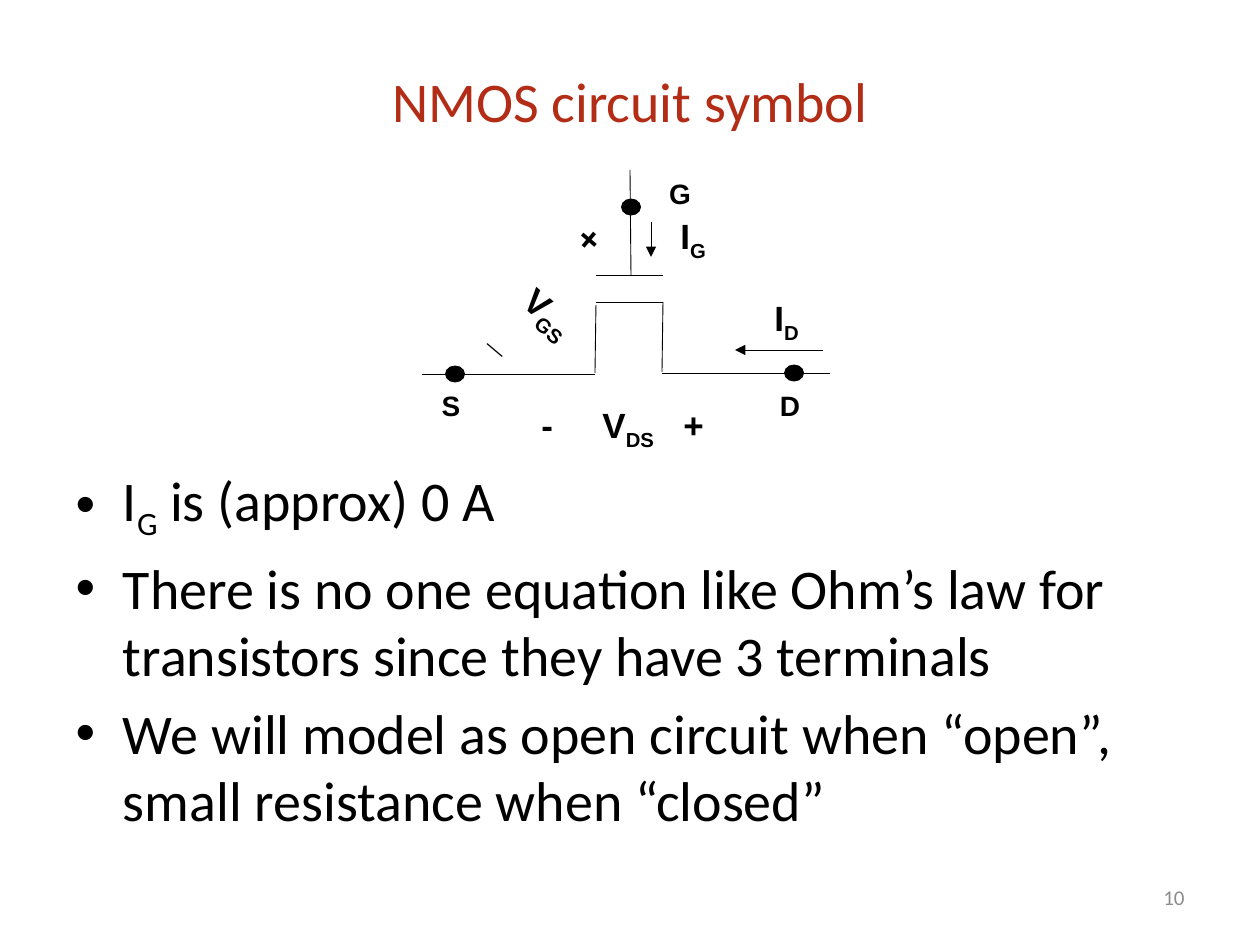
from dataclasses import dataclass

from lxml.etree import SubElement
from pptx import Presentation
from pptx.dml.color import RGBColor
from pptx.enum.shapes import MSO_CONNECTOR as Conn, MSO_SHAPE as Kind
from pptx.enum.text import MSO_ANCHOR as Anchor, MSO_AUTO_SIZE as Fit, PP_ALIGN as Align
from pptx.oxml.ns import qn
from pptx.util import Emu, Pt

SCALE = 914400 / 126  # EMU in one px
BLACK, RED, GRAY = "000000", "B32C16", "8C8C8C"
DOT_W, DOT_H = 19, 16


@dataclass
class Wire:
    x1: int
    y1: int
    x2: int
    y2: int
    arrow: bool = False


@dataclass
class Label:
    lines: list[str]  # text between ~ marks is subscript
    x: int
    y: int
    w: int
    h: int
    size: int = 20
    font: str = "Arial"
    color: str = BLACK
    bold: bool = True
    align: Align = Align.LEFT
    wrap: bool = False
    turn: float = 0
    gaps: tuple[int, ...] = ()  # points before each line
    tabs: tuple[int, ...] = ()


def px(n: float) -> Emu:
    return Emu(round(n * SCALE))


def rgb(code: str) -> RGBColor:
    return RGBColor.from_string(code)


def place(shape, x: int, y: int, w: int, h: int) -> None:
    shape.left, shape.top, shape.width, shape.height = map(px, (x, y, w, h))


def write(para, text: str, font: str, size: int, color: str, bold: bool = False) -> None:
    style = para.font
    style.name, style.size, style.bold = font, Pt(size), bold
    style.color.rgb = rgb(color)
    for i, part in enumerate(text.split("~")):
        if part:
            run = para.add_run()
            run.text = part
            if i % 2:
                run._r.get_or_add_rPr().set("baseline", "-25000")


def fill_box(frame, lines: list[str], *style) -> None:
    for i, text in enumerate(lines):
        para = frame.add_paragraph() if i else frame.paragraphs[0]
        write(para, text, *style)


def draw_wire(slide, wire: Wire) -> None:
    ends = map(px, (wire.x1, wire.y1, wire.x2, wire.y2))
    shape = slide.shapes.add_connector(Conn.STRAIGHT, *ends)
    shape.line.width = Pt(0.5)
    shape.line.color.rgb = rgb(BLACK)
    if wire.arrow:
        SubElement(shape.line._get_or_add_ln(), qn("a:tailEnd"), type="triangle")
    SubElement(shape._element.spPr, qn("a:effectLst"))


def draw_dot(slide, x: int, y: int) -> None:
    box = map(px, (x - DOT_W / 2, y - DOT_H / 2, DOT_W, DOT_H))
    dot = slide.shapes.add_shape(Kind.OVAL, *box)
    dot.shadow.inherit = False
    dot.fill.solid()
    dot.fill.fore_color.rgb = rgb(BLACK)
    dot.line.color.rgb = rgb(BLACK)
    dot.line.width = Pt(0.5)


def draw_label(slide, label: Label) -> None:
    box = slide.shapes.add_textbox(*map(px, (label.x, label.y, label.w, label.h)))
    box.rotation = label.turn
    frame = box.text_frame
    frame.word_wrap = label.wrap
    frame.auto_size = Fit.SHAPE_TO_FIT_TEXT
    fill_box(frame, label.lines, label.font, label.size, label.color, label.bold)
    for para in frame.paragraphs:
        para.alignment = label.align
    for para, gap in zip(frame.paragraphs, label.gaps):
        para.space_before = Pt(gap)
    if label.tabs:
        # Tab stops come before the default run style
        props = frame.paragraphs[0]._p.get_or_add_pPr()
        stops = SubElement(props, qn("a:tabLst"))
        props.insert(0, stops)
        for tab in label.tabs:
            SubElement(stops, qn("a:tab"), pos=str(px(tab)), algn="l")


WIRES = [
    Wire(663, 275, 596, 275),  # gate plate
    Wire(663, 302, 596, 302),  # channel
    Wire(663, 302, 662, 372),
    Wire(596, 305, 595, 373),
    Wire(631, 275, 630, 170),  # gate lead
    Wire(662, 373, 830, 373),  # drain lead
    Wire(422, 374, 595, 374),  # source lead
    Wire(823, 350, 735, 350, arrow=True),
    Wire(651, 222, 651, 257, arrow=True),
]
DOTS = [(631, 207), (455, 374), (794, 373)]
PIN = dict(size=16, align=Align.CENTER, wrap=True)
LABELS = [
    Label(["G"], 576, 170, 208, 47, **PIN),
    Label(["D"], 737, 382, 106, 47, **PIN),
    Label(["S"], 398, 382, 106, 47, **PIN),
    Label(["I~D~"], 762, 290, 52, 54),
    Label(["I~G~"], 668, 208, 53, 54),
    Label(["-\tV~DS~\t+"], 529, 397, 189, 54, wrap=True, tabs=(61, 142)),
    Label(["+", "V~GS~", "_"], 523, 208, 82, 180, turn=40.2, gaps=(0, 23, 0)),
]
POINTS = [
    "I~G~ is (approx) 0 A",
    "There is no one equation like Ohm’s law for transistors since they have 3 terminals",
    "We will model as open circuit when “open”, small resistance when “closed”",
]


def main() -> None:
    deck = Presentation()
    deck.slide_width, deck.slide_height = px(1260), px(945)
    slide = deck.slides.add_slide(deck.slide_layouts[1])

    # Title and list
    title, body = slide.placeholders
    place(title, 63, 21, 1134, 158)
    place(body, 63, 459, 1134, 385)
    fill_box(title.text_frame, ["NMOS circuit symbol"], "Calibri", 32, RED)
    fill_box(body.text_frame, POINTS, "Calibri", 32, BLACK)
    for shape in (title, body):
        shape.text_frame.auto_size = Fit.NONE
    title.text_frame.vertical_anchor = Anchor.MIDDLE

    # Transistor
    for wire in WIRES:
        draw_wire(slide, wire)
    for dot in DOTS:
        draw_dot(slide, *dot)
    for label in LABELS:
        draw_label(slide, label)

    # Page number
    page = slide.shapes.add_textbox(*map(px, (903, 872, 294, 50))).text_frame
    page.word_wrap = True
    page.vertical_anchor = Anchor.MIDDLE
    write(page.paragraphs[0], "10", "Calibri", 12, GRAY)
    page.paragraphs[0].alignment = Align.RIGHT

    deck.save("out.pptx")


if __name__ == "__main__":
    main()
